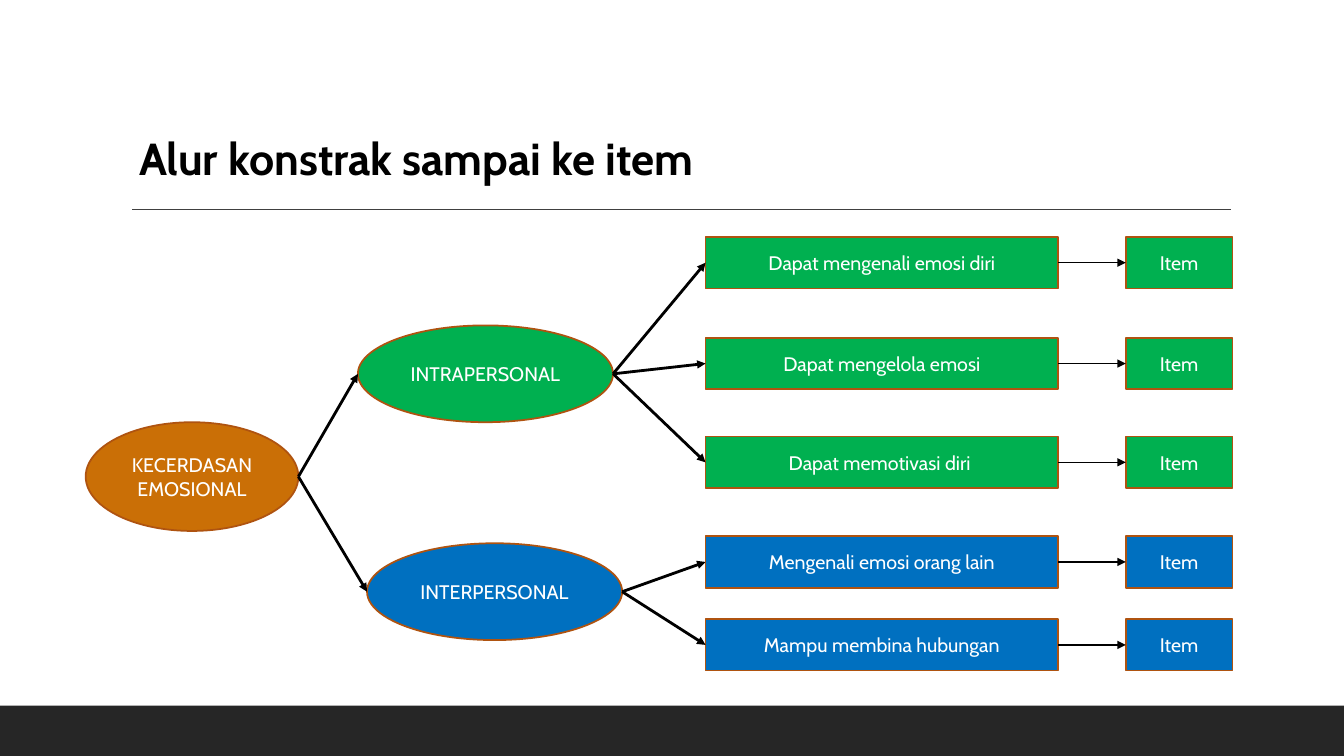
import dataclasses

import pptx
import pptx.dml.color
import pptx.enum.shapes
import pptx.enum.text
import pptx.oxml
import pptx.oxml.ns
import pptx.shapes.autoshape
import pptx.shapes.connector
import pptx.slide
import pptx.text.text
import pptx.util

Cm = pptx.util.Cm
Pt = pptx.util.Pt
MSO_SHAPE = pptx.enum.shapes.MSO_SHAPE
PP_ALIGN = pptx.enum.text.PP_ALIGN
MSO_ANCHOR = pptx.enum.text.MSO_ANCHOR

FONT = "Cabin"
COLORS = {
    "bar": "262626",
    "rule": "404040",
    "border": "AF5310",
    "construct": "CA6F06",
    "intra": "00B050",
    "inter": "0070C0",
    "white": "FFFFFF",
    "black": "000000",
}
SLIDE_W, SLIDE_H = 33.87, 19.05
BAR_H = 1.27
BOX_H = 1.3
INDICATOR_X, INDICATOR_W = 17.78, 8.89
ITEM_X, ITEM_W = 28.37, 2.69


@dataclasses.dataclass(frozen=True)
class Node:
    """A labelled shape; lengths are centimetres."""

    text: str
    color: str
    left: float
    top: float
    width: float
    height: float
    kind: MSO_SHAPE = MSO_SHAPE.RECTANGLE

    @property
    def entry(self) -> tuple[float, float]:
        return self.left, self.top + self.height / 2

    @property
    def exit(self) -> tuple[float, float]:
        return self.left + self.width, self.top + self.height / 2


@dataclasses.dataclass(frozen=True)
class Dimension:
    """An aspect of the construct with its indicators as (text, top)."""

    node: Node
    indicators: tuple[tuple[str, float], ...]


CONSTRUCT = Node("KECERDASAN EMOSIONAL", "construct", 2.16, 10.64, 5.36, 2.74, MSO_SHAPE.OVAL)
DIMENSIONS = (
    Dimension(
        Node("INTRAPERSONAL", "intra", 9.02, 8.2, 6.43, 2.44, MSO_SHAPE.OVAL),
        (
            ("Dapat mengenali emosi diri", 5.97),
            ("Dapat mengelola emosi", 8.51),
            ("Dapat memotivasi diri ", 11.0),
        ),
    ),
    Dimension(
        Node("INTERPERSONAL", "inter", 9.25, 13.69, 6.43, 2.44, MSO_SHAPE.OVAL),
        (
            ("Mengenali emosi orang lain", 13.51),
            ("Mampu membina hubungan", 15.6),
        ),
    ),
)


def rgb(name: str) -> pptx.dml.color.RGBColor:
    return pptx.dml.color.RGBColor.from_string(COLORS[name])


def add_run(p: pptx.text.text._Paragraph, text: str, size: float, color: str, bold: bool = False) -> None:
    r = p.add_run()
    r.text = text
    r.font.name = FONT
    r.font.size = Pt(size)
    r.font.bold = bold
    r.font.color.rgb = rgb(color)


def add_filled_shape(
    s: pptx.slide.Slide, kind: MSO_SHAPE, left: float, top: float, width: float, height: float, color: str
) -> pptx.shapes.autoshape.Shape:
    sp = s.shapes.add_shape(kind, Cm(left), Cm(top), Cm(width), Cm(height))
    sp.shadow.inherit = False
    sp.fill.solid()
    sp.fill.fore_color.rgb = rgb(color)
    sp.line.fill.background()
    return sp


def add_node(s: pptx.slide.Slide, node: Node) -> None:
    sp = add_filled_shape(s, node.kind, node.left, node.top, node.width, node.height, node.color)
    sp.line.color.rgb = rgb("border")
    sp.line.width = Pt(1.25)
    tf = sp.text_frame
    tf.word_wrap = True
    tf.vertical_anchor = MSO_ANCHOR.MIDDLE
    p = tf.paragraphs[0]
    p.alignment = PP_ALIGN.CENTER
    add_run(p, node.text, 14, "white")


def add_line(
    s: pptx.slide.Slide, start: tuple[float, float], end: tuple[float, float], color: str, width: float
) -> pptx.shapes.connector.Connector:
    cxn = s.shapes.add_connector(
        pptx.enum.shapes.MSO_CONNECTOR.STRAIGHT, Cm(start[0]), Cm(start[1]), Cm(end[0]), Cm(end[1])
    )
    cxn.line.color.rgb = rgb(color)
    cxn.line.width = Pt(width)
    cxn.element.spPr.append(pptx.oxml.parse_xml(f"<a:effectLst {pptx.oxml.ns.nsdecls('a')}/>"))
    return cxn


def add_arrow(s: pptx.slide.Slide, source: Node, target: Node, width: float) -> None:
    cxn = add_line(s, source.exit, target.entry, "black", width)
    ln = cxn.element.spPr.find(pptx.oxml.ns.qn("a:ln"))
    ln.append(pptx.oxml.parse_xml(f'<a:tailEnd {pptx.oxml.ns.nsdecls("a")} type="triangle"/>'))


def add_title(s: pptx.slide.Slide, text: str) -> None:
    sp = s.shapes.title
    sp.left, sp.top, sp.width, sp.height = Cm(3.25), Cm(3.15), Cm(22.35), Cm(1.63)
    tf = sp.text_frame
    tf.word_wrap = True
    tf.auto_size = pptx.enum.text.MSO_AUTO_SIZE.NONE
    tf.vertical_anchor = MSO_ANCHOR.MIDDLE
    p = tf.paragraphs[0]
    p.alignment = PP_ALIGN.LEFT
    add_run(p, text, 32, "black", bold=True)


def add_dimension(s: pptx.slide.Slide, dimension: Dimension) -> None:
    """Draw a dimension, its indicators and one item per indicator."""
    node = dimension.node
    add_node(s, node)
    add_arrow(s, CONSTRUCT, node, 2)
    for text, top in dimension.indicators:
        indicator = Node(text, node.color, INDICATOR_X, top, INDICATOR_W, BOX_H)
        item = Node("Item", node.color, ITEM_X, top, ITEM_W, BOX_H)
        add_node(s, indicator)
        add_node(s, item)
        add_arrow(s, node, indicator, 2)
        add_arrow(s, indicator, item, 1)


def main() -> None:
    prs = pptx.Presentation()
    prs.slide_width, prs.slide_height = Cm(SLIDE_W), Cm(SLIDE_H)
    s = prs.slides.add_slide(prs.slide_layouts.get_by_name("Title Only"))
    add_title(s, "Alur konstrak sampai ke item")
    add_filled_shape(s, MSO_SHAPE.RECTANGLE, 0, SLIDE_H - BAR_H, SLIDE_W, BAR_H, "bar")
    add_line(s, (3.33, 5.28), (31.01, 5.28), "rule", 1)
    add_node(s, CONSTRUCT)
    for dimension in DIMENSIONS:
        add_dimension(s, dimension)
    prs.save("out.pptx")


if __name__ == "__main__":
    main()
